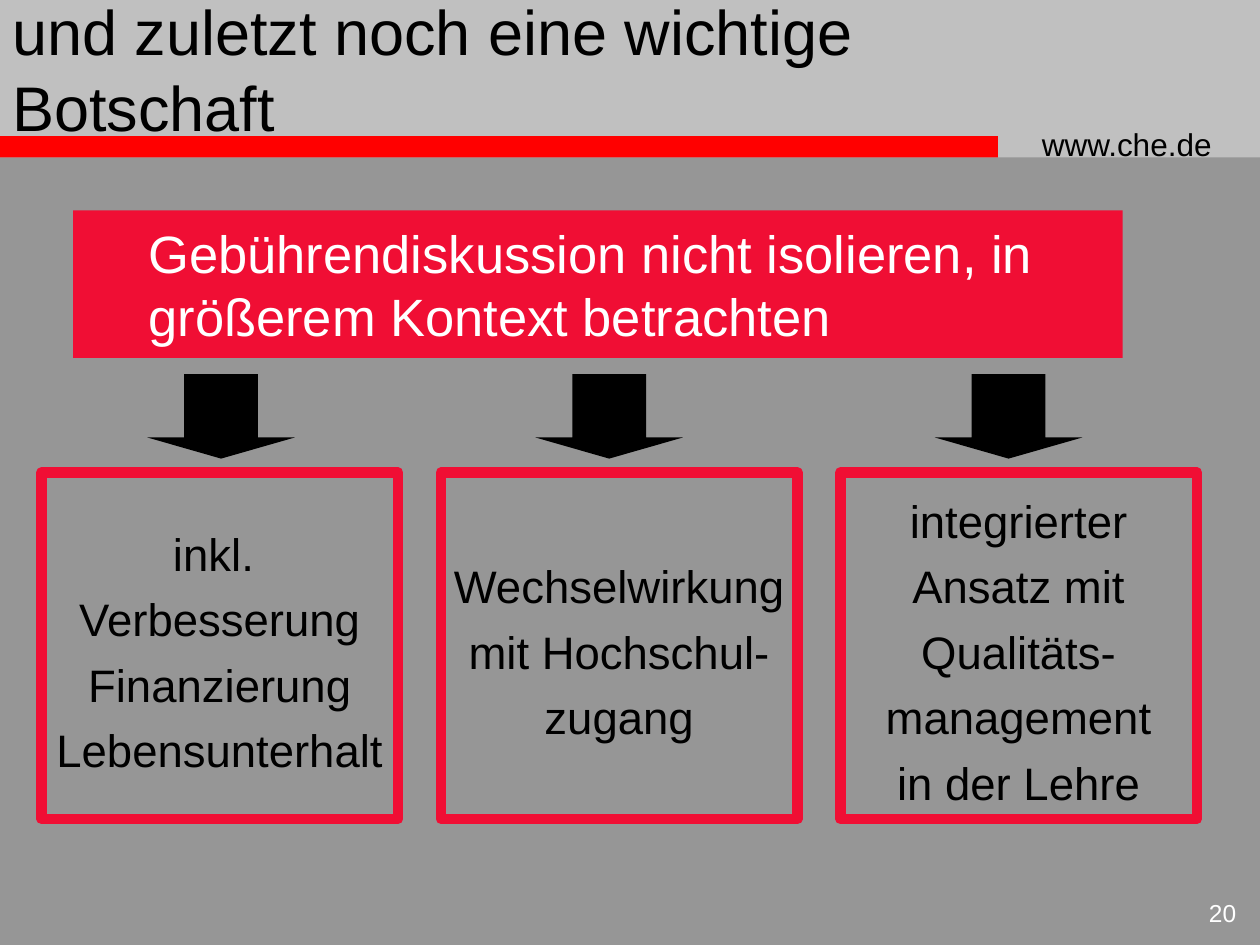
import pptx
import pptx.util
import pptx.dml.color
import pptx.enum.shapes
import pptx.enum.text

WIDTH, HEIGHT = 10, 7.5
COLORS = {
    "background": "969696",
    "header": "C0C0C0",
    "rule": "FF0000",
    "accent": "F00E34",
    "dark": "000000",
    "light": "FFFFFF",
}
SHAPES = pptx.enum.shapes.MSO_SHAPE
ALIGN = pptx.enum.text.PP_ALIGN
ANCHOR = pptx.enum.text.MSO_ANCHOR

COLUMN_LEFT, COLUMN_STEP, COLUMN_WIDTH = 0.33, 3.17, 2.83
COLUMNS = [
    # arrow's left edge, lines of the box
    (1.17, ["inkl. ", "Verbesserung", "Finanzierung", "Lebensunterhalt"]),
    (4.25, ["Wechselwirkung", "mit Hochschul-", "zugang"]),
    (7.42, ["integrierter", "Ansatz mit", "Qualitäts-", "management", "in der Lehre"]),
]


def color(name):
    return pptx.dml.color.RGBColor.from_string(COLORS[name])


def inches(place):
    return [pptx.util.Inches(length) for length in place]


def add_block(page, kind, place, fill=None, border=None):
    block = page.shapes.add_shape(kind, *inches(place))
    block.shadow.inherit = False
    if fill:
        block.fill.solid()
        block.fill.fore_color.rgb = color(fill)
    else:
        block.fill.background()
    if border:
        block.line.color.rgb = color(border)
        block.line.width = pptx.util.Pt(6)
    else:
        block.line.fill.background()
    return block


def write(box, lines, size, ink="dark", align=ALIGN.LEFT, anchor=ANCHOR.TOP,
          wrap=True, spacing=None, indent=None):
    """Fill a box with one paragraph per line, all formatted alike."""
    frame = box.text_frame
    frame.text = "\n".join(lines)
    frame.word_wrap = wrap
    frame.vertical_anchor = anchor
    for para in frame.paragraphs:
        para.alignment = align
        if spacing:
            para.line_spacing = spacing
        if indent:
            para.level = 1
            properties = para._p.get_or_add_pPr()
            properties.set("marL", str(pptx.util.Inches(indent)))
            properties.set("indent", "0")
        for span in para.runs:
            span.font.name = "Arial"
            span.font.size = pptx.util.Pt(size)
            span.font.color.rgb = color(ink)


def add_text(page, place, text, size, **style):
    write(page.shapes.add_textbox(*inches(place)), [text], size, **style)


def add_header(page):
    add_block(page, SHAPES.RECTANGLE, (0, 0, WIDTH, HEIGHT / 6), "header")
    add_block(page, SHAPES.RECTANGLE, (-0.01, 1.08, 7.93, 0.17), "rule")
    add_text(page, (8.17, 0.94, 1.75, 0.4), "www.che.de", 18)
    add_text(page, (0, 0, 8.08, 1.08), "und zuletzt noch eine wichtige Botschaft",
             36, anchor=ANCHOR.MIDDLE)


def add_banner(page):
    banner = add_block(page, SHAPES.RECTANGLE, (0.58, 1.67, 8.33, 1.17), "accent")
    write(banner, ["Gebührendiskussion nicht isolieren, in", "größerem Kontext betrachten"],
          30, ink="light", anchor=ANCHOR.MIDDLE, indent=0.5)


def add_columns(page):
    for index, (arrow_left, lines) in enumerate(COLUMNS):
        left = COLUMN_LEFT + index * COLUMN_STEP
        box = add_block(page, SHAPES.RECTANGLE, (left, HEIGHT / 2, COLUMN_WIDTH, 2.75),
                        border="accent")
        write(box, lines, 26, align=ALIGN.CENTER, anchor=ANCHOR.MIDDLE,
              wrap=False, spacing=1.2)
        arrow = add_block(page, SHAPES.DOWN_ARROW, (arrow_left, 2.97, 1.17, 0.67), "dark")
        arrow.adjustments[0] = 0.5
        arrow.adjustments[1] = 0.25


def main():
    deck = pptx.Presentation()
    deck.slide_width, deck.slide_height = inches((WIDTH, HEIGHT))
    page = deck.slides.add_slide(deck.slide_layouts[6])
    page.background.fill.solid()
    page.background.fill.fore_color.rgb = color("background")
    add_header(page)
    add_banner(page)
    add_columns(page)
    add_text(page, (9.33, 7.08, 0.58, 0.42), "20", 14, ink="light", align=ALIGN.RIGHT)
    deck.save("out.pptx")


if __name__ == "__main__":
    main()
